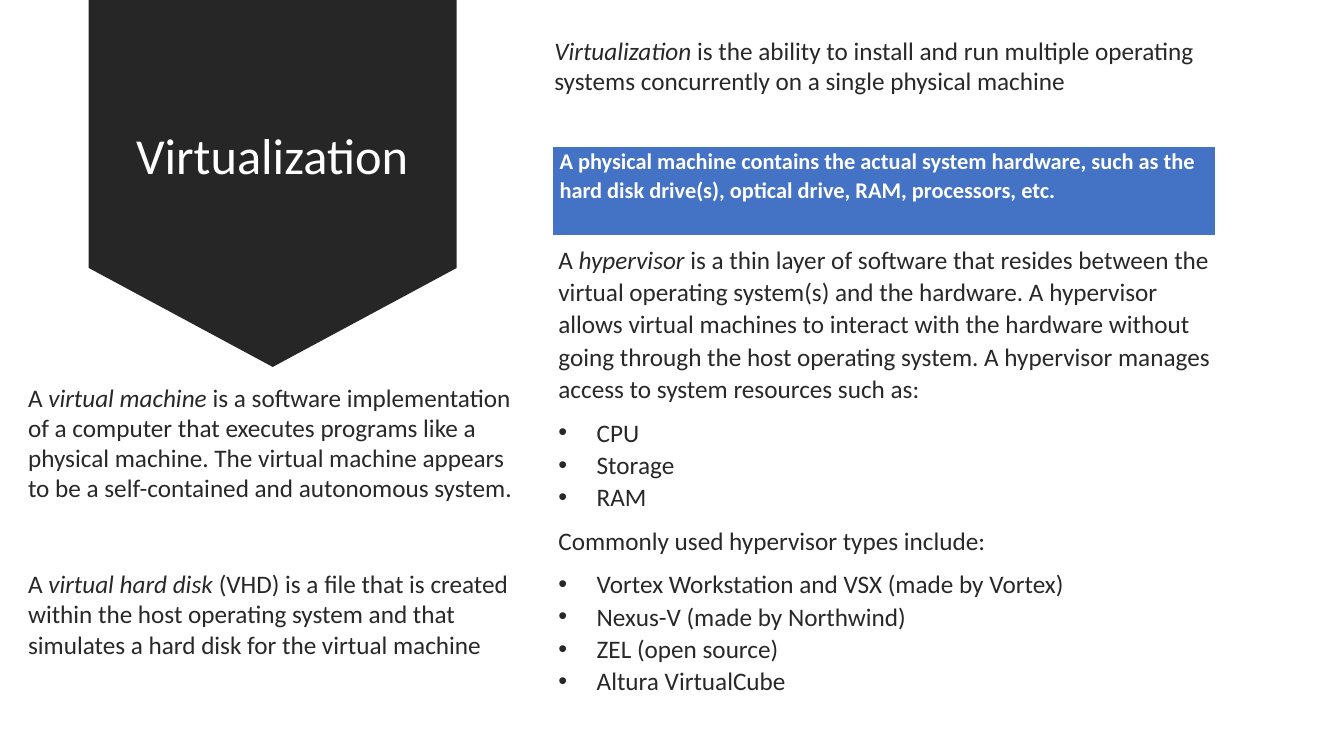
from dataclasses import dataclass

from lxml import etree
from pptx import Presentation
from pptx import util as u
from pptx.dml.color import RGBColor
from pptx.enum import shapes, text
from pptx.oxml.ns import qn


@dataclass(frozen=True)
class Theme:
    font: str = "Calibri"
    ink: str = "282828"
    banner: str = "262626"
    accent: str = "4472C4"
    white: str = "FFFFFF"
    title: int = 36
    body: int = 18
    note: int = 16
    spacing: float = 1.07
    after: int = 8
    indent: float = 0.38


T = Theme()

DEFINITION = [("Virtualization", True),
              (" is the ability to install and run multiple operating systems "
               "concurrently on a single physical machine", False)]
PHYSICAL = ("A physical machine contains the actual system hardware, such as the "
            "hard disk drive(s), optical drive, RAM, processors, etc.")
HYPERVISOR = [("A ", False), ("hypervisor", True),
              (" is a thin layer of software that resides between the virtual operating "
               "system(s) and the hardware. A hypervisor allows virtual machines to interact "
               "with the hardware without going through the host operating system. "
               "A hypervisor manages access to system resources such as:", False)]
RESOURCES = ["CPU", "Storage", "RAM"]
TYPES_LEAD = [("Commonly used hypervisor types include:", False)]
TYPES = ["Vortex Workstation and VSX (made by Vortex)", "Nexus-V (made by Northwind)",
         "ZEL (open source)", "Altura VirtualCube"]
MACHINE = [("A ", False), ("virtual machine", True),
           (" is a software implementation of a computer that executes programs like a "
            "physical machine. The virtual machine appears to be a self-contained and "
            "autonomous system.", False)]
DISK = [("A ", False), ("virtual hard disk", True),
        (" (VHD) is a file that is created within the host operating system and that "
         "simulates a hard disk for the virtual machine", False)]


def inches(*values):
    return [u.Inches(v) for v in values]


def add_run(p, words, size, color, bold=False, italic=False):
    r = p.add_run()
    r.text = words
    f = r.font
    f.name, f.size, f.bold, f.italic = T.font, u.Pt(size), bold, italic
    f.color.rgb = RGBColor.from_string(color)


def add_runs(p, runs):
    for words, italic in runs:
        add_run(p, words, T.body, T.ink, italic=italic)


def add_text_box(s, box):
    tf = s.shapes.add_textbox(*inches(*box)).text_frame
    tf.word_wrap = True
    return tf


def add_statement(s, box, runs):
    add_runs(add_text_box(s, box).paragraphs[0], runs)


def add_title_banner(s, box, words):
    left, top, width, height = box
    sp = s.shapes.add_shape(shapes.MSO_SHAPE.DOWN_ARROW, *inches(*box))
    sp.adjustments[0], sp.adjustments[1] = 1, 0.269
    sp.shadow.inherit = False
    sp.fill.solid()
    sp.fill.fore_color.rgb = RGBColor.from_string(T.banner)
    sp.line.fill.background()

    title = s.shapes.title
    title.element.addprevious(sp.element)
    title.left, title.top, title.width, title.height = inches(
        left + 0.24, top + 0.22, width - 0.49, height - 0.93)
    tf = title.text_frame
    tf.word_wrap = True
    tf.auto_size = text.MSO_AUTO_SIZE.NONE
    tf.vertical_anchor = text.MSO_ANCHOR.MIDDLE
    p = tf.paragraphs[0]
    p.alignment, p.line_spacing = text.PP_ALIGN.CENTER, 0.9
    add_run(p, words, T.title, T.white)


def add_border(cell, side, points):
    ln = etree.Element(qn(f"a:ln{side}"), w=str(u.Pt(points)))
    fill = etree.SubElement(ln, qn("a:solidFill"))
    etree.SubElement(fill, qn("a:srgbClr"), val=T.white)
    return ln


def add_callout(s, box, words):
    table = s.shapes.add_table(1, 1, *inches(*box)).table
    cell = table.cell(0, 0)
    cell.margin_left = cell.margin_right = u.Inches(0.07)
    cell.margin_top = cell.margin_bottom = 0
    cell.fill.solid()
    cell.fill.fore_color.rgb = RGBColor.from_string(T.accent)
    borders = {"L": 1, "R": 1, "T": 1, "B": 3}
    tcPr = cell._tc.get_or_add_tcPr()
    for i, (side, points) in enumerate(borders.items()):
        tcPr.insert(i, add_border(cell, side, points))
    p = cell.text_frame.paragraphs[0]
    p.line_spacing = T.spacing
    add_run(p, words, T.note, T.white, bold=True)


def add_bullet(p):
    pPr = p._p.get_or_add_pPr()
    pPr.set("marL", str(u.Inches(T.indent)))
    pPr.set("indent", str(-u.Inches(T.indent)))
    etree.SubElement(pPr, qn("a:buFont"), typeface="Arial")
    etree.SubElement(pPr, qn("a:buChar"), char="•")


def add_hypervisor_notes(s, box, sections):
    tf = add_text_box(s, box)
    p = tf.paragraphs[0]
    for n, (lead, items) in enumerate(sections):
        if n:
            p = tf.add_paragraph()
        p.line_spacing, p.space_after = T.spacing, u.Pt(T.after)
        add_runs(p, lead)
        for item in items:
            p = tf.add_paragraph()
            p.line_spacing = T.spacing
            p.space_after = u.Pt(T.after if item == items[-1] else 0)
            add_bullet(p)
            add_runs(p, [(item, False)])


def main():
    prs = Presentation()
    prs.slide_width, prs.slide_height = inches(13.33, 7.5)
    s = prs.slides.add_slide(prs.slide_layouts[5])
    add_title_banner(s, (0.88, -0.01, 3.65, 3.65), "Virtualization")
    add_statement(s, (5.4, 0.3, 6.67, 0.71), DEFINITION)
    add_callout(s, (5.48, 1.45, 6.58, 0.9), PHYSICAL)
    add_hypervisor_notes(s, (5.44, 2.35, 6.67, 4.64),
                         [(HYPERVISOR, RESOURCES), (TYPES_LEAD, TYPES)])
    add_statement(s, (0.18, 3.74, 5.01, 1.62), MACHINE)
    add_statement(s, (0.18, 5.59, 5.01, 1.01), DISK)
    prs.save("out.pptx")


if __name__ == "__main__":
    main()
